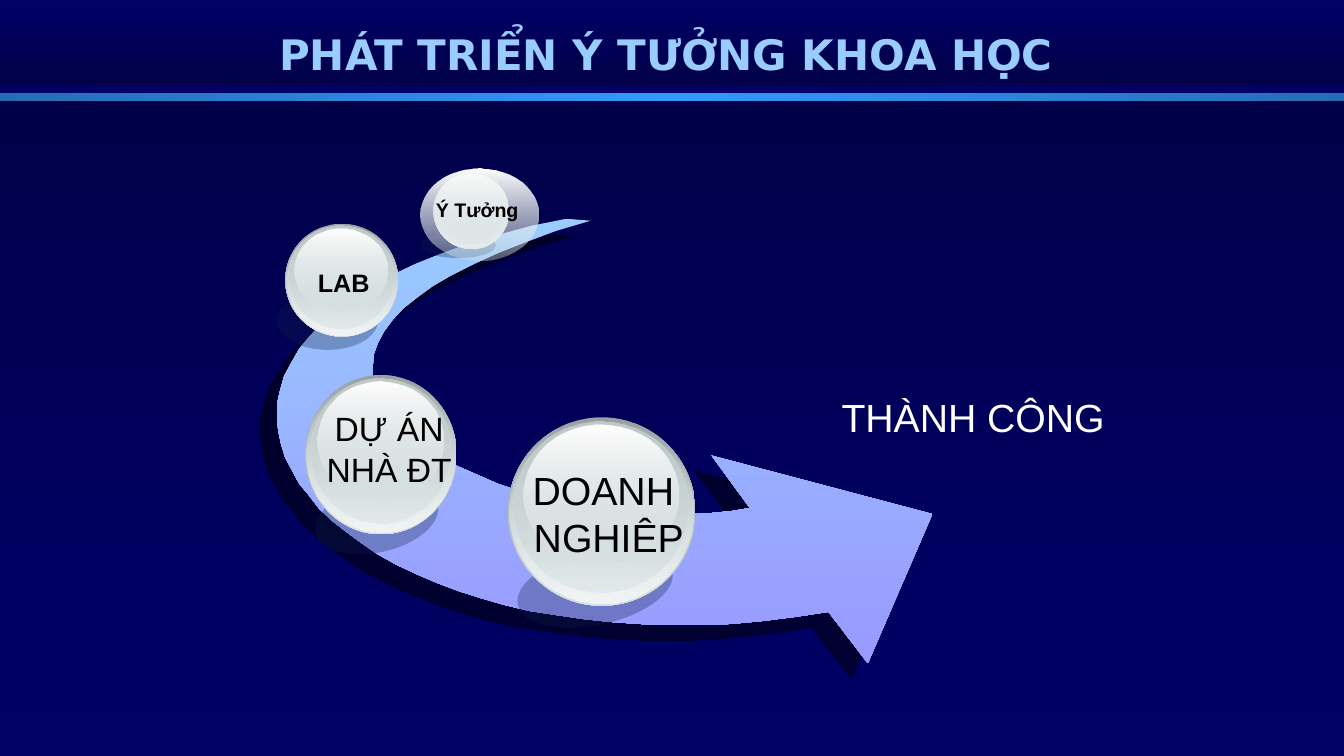
from dataclasses import dataclass
from typing import NamedTuple

from lxml.etree import SubElement
from pptx import Presentation
from pptx.dml.color import RGBColor
from pptx.enum.shapes import MSO_SHAPE
from pptx.enum.text import MSO_ANCHOR, MSO_AUTO_SIZE, PP_ALIGN
from pptx.oxml.ns import qn
from pptx.shapes.base import BaseShape
from pptx.slide import Slide
from pptx.util import Pt


class Stop(NamedTuple):
    position: int
    color: str
    opacity: int = 100


class Box(NamedTuple):
    left: float
    top: float
    width: float
    height: float

    def lengths(self) -> list[Pt]:
        return [Pt(value) for value in self]

    def inner(self, share: "Box") -> "Box":
        return Box(
            self.left + share.left * self.width,
            self.top + share.top * self.height,
            share.width * self.width,
            share.height * self.height,
        )


@dataclass(frozen=True)
class Theme:
    body_font: str = "Arial"
    title_font: str = "DejaVu Sans"
    background: str = "000066"
    title_color: str = "99CCFF"
    outcome_color: str = "FFFFFF"
    label_color: str = "000000"
    title_size: int = 30
    large_size: int = 28
    medium_size: int = 24
    small_size: int = 18
    tiny_size: int = 14
    header: tuple = (Stop(0, "000066"), Stop(100, "000049"))
    body: tuple = (Stop(0, "000049"), Stop(100, "000066", 48))
    stripe: tuple = (Stop(0, "246DB6"), Stop(50, "3399FF"), Stop(100, "246DB6"))
    arrow: tuple = (Stop(0, "99CCFF"), Stop(100, "9999FF"))
    ball_shadow: tuple = (Stop(0, "0F2145", 30), Stop(100, "0F2145", 30))
    rim: tuple = (Stop(0, "99A1A2"), Stop(100, "D6E1E2"))
    rim_light: tuple = (Stop(0, "D6E1E2", 0), Stop(100, "F2F5F5"))
    face: tuple = (Stop(0, "C1CBCC"), Stop(100, "D6E1E2", 48))
    gloss: tuple = (Stop(0, "FFFFFF"), Stop(100, "D6E1E2", 38))


THEME = Theme()


@dataclass(frozen=True)
class Stage:
    lines: tuple[str, ...]
    size: int
    bold: bool
    ball: Box
    shadow: Box
    label: Box
    tilt: float = 0
    gloss: Box | None = None


STAGES = (
    Stage(("DOANH", " NGHIÊP"), THEME.large_size, False, Box(362.9, 298.1, 133.9, 134.6),
          Box(368.6, 393.8, 113, 52.6), Box(365.8, 329.8, 130.3, 74.9), -12.1),
    Stage(("DỰ ÁN", "NHÀ ĐT"), THEME.medium_size, False, Box(218.2, 267.8, 108, 113.8),
          Box(224.6, 346.3, 89.3, 48.2), Box(225.4, 288, 105.1, 65.5), -12.9),
    Stage(("LAB",), THEME.small_size, True, Box(203.8, 159.8, 80.6, 80.6),
          Box(198, 208.1, 72, 41.8), Box(219.6, 187.2, 51.8, 28.8)),
    Stage(("Ý Tưởng",), THEME.tiny_size, True, Box(309.6, 123.8, 54, 54),
          Box(300.2, 166.3, 54, 18), Box(303.8, 138.2, 74.2, 24.5),
          gloss=Box(300.2, 120.2, 84.2, 66.2)),
)

BALL_LAYERS = (
    (Box(0, 0, 1, 1), THEME.rim),
    (Box(0.01, 0.01, 0.98, 0.98), THEME.rim_light),
    (Box(0.03, 0.02, 0.93, 0.91), THEME.face),
)
GLOSS_SHARE = Box(0.08, 0.04, 0.83, 0.74)

ARROW_UNIT = Pt(0.72)
ARROW_OUTLINE = (
    (562, 217), (527, 224), (494, 233), (464, 242), (437, 252), (412, 262), (389, 273),
    (369, 284), (350, 296), (334, 308), (319, 321), (307, 334), (297, 346), (289, 360),
    (282, 373), (278, 387), (275, 400), (275, 414), (276, 427), (279, 441), (283, 454),
    (290, 467), (297, 480), (307, 492), (317, 505), (330, 517), (344, 528), (359, 539),
    (375, 550), (393, 560), (412, 569), (433, 578), (454, 586), (476, 593), (500, 600),
    (525, 606), (551, 610), (578, 614), (606, 617), (634, 619), (664, 620), (694, 620),
    (725, 619), (757, 616), (789, 612), (822, 607), (861, 658), (925, 510), (706, 452),
    (744, 504), (726, 507), (706, 509), (687, 510), (667, 511), (647, 510), (627, 509),
    (607, 507), (588, 504), (568, 501), (549, 496), (530, 491), (512, 486), (494, 480),
    (478, 473), (462, 466), (446, 459), (433, 451), (420, 442), (408, 433), (398, 424),
    (389, 414), (381, 404), (376, 394), (372, 384), (370, 373), (370, 362), (371, 351),
    (375, 340), (381, 329), (389, 318), (400, 306), (414, 295), (429, 284), (448, 273),
    (470, 262), (494, 251), (522, 240), (552, 229), (586, 219),
)


def paint(shape: BaseShape, stops: tuple[Stop, ...], angle: int = 270) -> None:
    shape.shadow.inherit = False
    shape.line.fill.background()
    shape.fill.gradient()
    shape.fill.gradient_angle = angle
    stop_list = shape._element.spPr.find(qn("a:gradFill")).find(qn("a:gsLst"))
    for default_stop in list(stop_list):
        stop_list.remove(default_stop)
    for stop in stops:
        entry = SubElement(stop_list, qn("a:gs"), pos=str(stop.position * 1000))
        color = SubElement(entry, qn("a:srgbClr"), val=stop.color)
        if stop.opacity < 100:
            SubElement(color, qn("a:alpha"), val=str(stop.opacity * 1000))


def add_figure(slide: Slide, kind: MSO_SHAPE, box: Box, stops: tuple[Stop, ...],
               angle: int = 270, tilt: float = 0) -> None:
    figure = slide.shapes.add_shape(kind, *box.lengths())
    figure.rotation = tilt
    paint(figure, stops, angle)


def add_label(slide: Slide, box: Box, lines: tuple[str, ...], font_format: dict, color: str,
              align: PP_ALIGN, frame_format: dict) -> None:
    frame = slide.shapes.add_textbox(*box.lengths()).text_frame
    for name, value in frame_format.items():
        setattr(frame, name, value)
    frame.text = "\n".join(lines)
    for paragraph in frame.paragraphs:
        paragraph.alignment = align
        for name, value in font_format.items():
            setattr(paragraph.font, name, value)
        paragraph.font.color.rgb = RGBColor.from_string(color)


def add_arrow(slide: Slide) -> None:
    builder = slide.shapes.build_freeform(*ARROW_OUTLINE[0], scale=ARROW_UNIT)
    builder.add_line_segments(ARROW_OUTLINE[1:], close=True)
    arrow = builder.convert_to_shape()
    paint(arrow, THEME.arrow)
    effects = arrow._element.spPr.find(qn("a:effectLst"))
    shadow = SubElement(effects, qn("a:outerShdw"), blurRad="0", dist=str(Pt(16.3)),
                        dir=str(137 * 60000), algn="ctr", rotWithShape="0")
    color = SubElement(shadow, qn("a:srgbClr"), val="000000")
    SubElement(color, qn("a:alpha"), val="50000")


def add_stage(slide: Slide, stage: Stage) -> None:
    add_figure(slide, MSO_SHAPE.OVAL, stage.shadow, THEME.ball_shadow, tilt=stage.tilt)
    for share, stops in BALL_LAYERS:
        add_figure(slide, MSO_SHAPE.OVAL, stage.ball.inner(share), stops)
    gloss = stage.gloss or stage.ball.inner(GLOSS_SHARE)
    add_figure(slide, MSO_SHAPE.OVAL, gloss, THEME.gloss)
    add_label(slide, stage.label, stage.lines,
              {"name": THEME.body_font, "size": Pt(stage.size), "bold": stage.bold},
              THEME.label_color, PP_ALIGN.CENTER,
              {"word_wrap": False, "auto_size": MSO_AUTO_SIZE.SHAPE_TO_FIT_TEXT})


def main() -> None:
    deck = Presentation()
    deck.slide_width, deck.slide_height = Pt(960), Pt(540)
    slide = deck.slides.add_slide(deck.slide_layouts[6])
    slide.background.fill.solid()
    slide.background.fill.fore_color.rgb = RGBColor.from_string(THEME.background)

    add_figure(slide, MSO_SHAPE.RECTANGLE, Box(0, 0, 960, 60.5), THEME.header)
    add_figure(slide, MSO_SHAPE.RECTANGLE, Box(0, 71.3, 960, 468.7), THEME.body)
    add_figure(slide, MSO_SHAPE.RECTANGLE, Box(0, 66.2, 960, 5.8), THEME.stripe, angle=0)
    add_label(slide, Box(23.8, 12.2, 904.3, 52.6), ("PHÁT TRIỂN Ý TƯỞNG KHOA HỌC",),
              {"name": THEME.title_font, "size": Pt(THEME.title_size), "bold": True},
              THEME.title_color, PP_ALIGN.CENTER,
              {"word_wrap": True, "vertical_anchor": MSO_ANCHOR.MIDDLE})
    add_arrow(slide)
    add_label(slide, Box(594, 277.2, 221.8, 41), ("THÀNH CÔNG",),
              {"name": THEME.body_font, "size": Pt(THEME.large_size)},
              THEME.outcome_color, PP_ALIGN.LEFT,
              {"word_wrap": True, "auto_size": MSO_AUTO_SIZE.SHAPE_TO_FIT_TEXT})
    for stage in STAGES:
        add_stage(slide, stage)
    deck.save("out.pptx")


if __name__ == "__main__":
    main()
